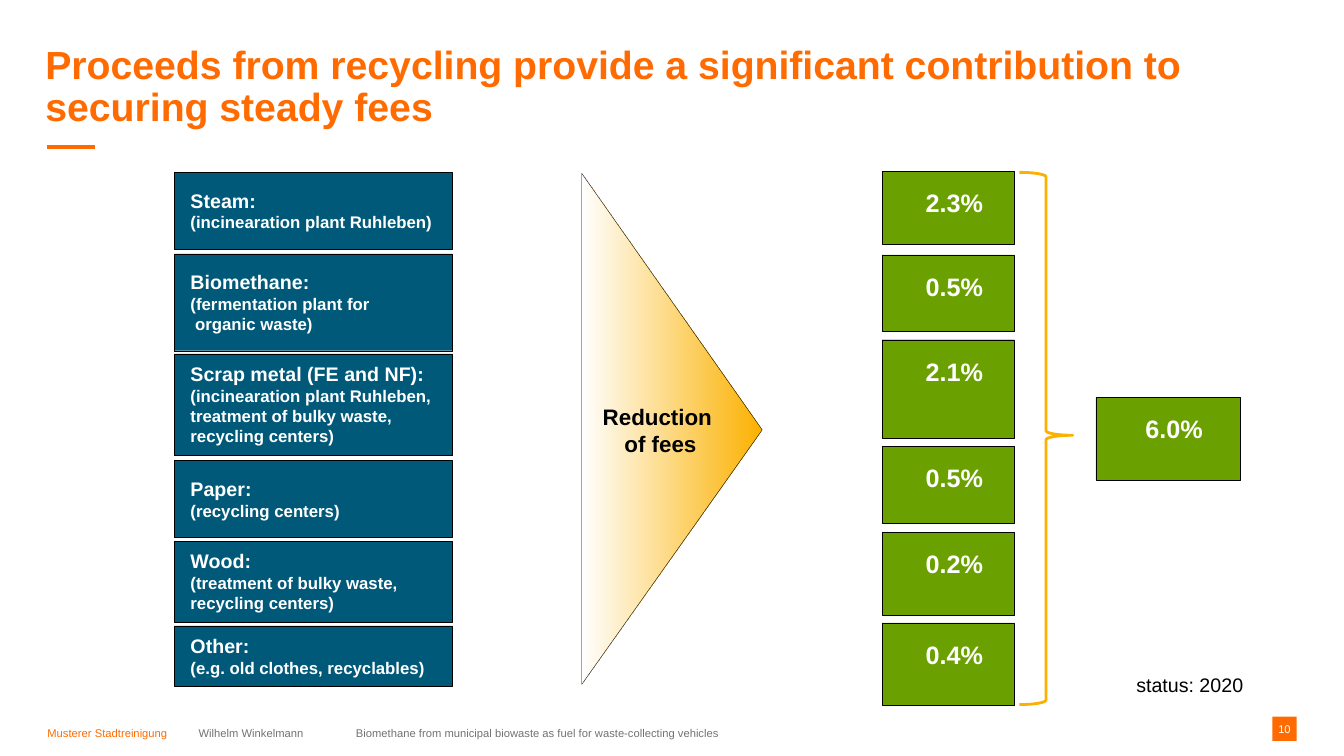
from dataclasses import dataclass

from lxml.etree import SubElement
from pptx import Presentation
from pptx.dml.color import RGBColor
from pptx.enum.shapes import MSO_CONNECTOR as Connector, MSO_SHAPE as Shape
from pptx.enum.text import MSO_ANCHOR as Anchor, MSO_AUTO_SIZE as AutoSize, PP_ALIGN as Align
from pptx.oxml.ns import qn
from pptx.util import Pt

TITLE = "Proceeds from recycling provide a significant contribution to securing steady fees"
SOURCES = [
    ("Steam:", "(incinearation plant Ruhleben)", 171, 76, 16),
    ("Biomethane:", "(fermentation plant for\v organic waste)", 252, 96, 16),
    ("Scrap metal (FE and NF):",
     "(incinearation plant Ruhleben, treatment of bulky waste, recycling centers)", 351, 101, 8),
    ("Paper:", "(recycling centers)", 457, 76, 16),
    ("Wood:", "(treatment of bulky waste, recycling centers)", 537, 80, 8),
    ("Other:", "(e.g. old clothes, recyclables)", 621, 60, 8),
]
SHARES = [
    ("2.3%", 875, 170, 131, 72),
    ("0.5%", 875, 253, 131, 76),
    ("2.1%", 875, 337, 131, 98),
    ("0.5%", 875, 443, 131, 76),
    ("0.2%", 875, 528, 131, 82),
    ("0.4%", 875, 618, 131, 82),
    ("6.0%", 1087, 394, 143, 82),
]
EFFECT = ["Reduction", " of fees"]
STATUS = "status: 2020"
FOOTER = [
    ("Musterer Stadtreinigung", 47, 140, "orange"),
    ("Wilhelm Winkelmann", 197, 140, "grey"),
    ("Biomethane from municipal biowaste as fuel for waste-collecting vehicles", 353, 600, "grey"),
]
PAGE_NUMBER = "10"


@dataclass(frozen=True)
class Theme:
    font: str = "Arial"
    orange: str = "FF6B00"
    amber: str = "FBB100"
    blue: str = "005979"
    green: str = "6AA000"
    grey: str = "767171"
    black: str = "000000"
    white: str = "FFFFFF"
    title: int = 28
    share: int = 18
    effect: int = 16
    heading: int = 14
    detail: int = 12
    small: int = 8
    hairline: float = 0.25


THEME = Theme()
EMU_PER_PX = 9144


def px(*lengths):
    return [round(length * EMU_PER_PX) for length in lengths]


def rgb(colour):
    return RGBColor.from_string(colour)


def write(shape, lines, sizes, colour, bold=False, align=Align.LEFT,
          anchor=Anchor.TOP, insets=(0, 0, 0, 0), wrap=True):
    frame = shape.text_frame
    frame.text = "\n".join(lines)
    frame.word_wrap = wrap
    frame.auto_size = AutoSize.NONE
    frame.vertical_anchor = anchor
    frame.margin_left, frame.margin_top, frame.margin_right, frame.margin_bottom = px(*insets)
    for para, size in zip(frame.paragraphs, sizes):
        para.alignment = align
        for span in para.runs:
            span.font.name = THEME.font
            span.font.size = Pt(size)
            span.font.bold = bold
            span.font.color.rgb = rgb(colour)


def add_box(page, kind, area, fill=None, line=None, width=THEME.hairline):
    box = page.shapes.add_shape(kind, *px(*area))
    box.shadow.inherit = False
    if fill:
        box.fill.solid()
        box.fill.fore_color.rgb = rgb(fill)
    else:
        box.fill.background()
    if line:
        box.line.color.rgb = rgb(line)
        box.line.width = Pt(width)
    else:
        box.line.fill.background()
    return box


def add_label(page, area, lines, size, colour, **style):
    label = page.shapes.add_textbox(*px(*area))
    write(label, lines, [size] * len(lines), colour, **style)


def add_title(page):
    title = page.shapes.title
    title.left, title.top, title.width, title.height = px(45, 45, 1241, 87)
    write(title, [TITLE], [THEME.title], THEME.orange, bold=True)
    title.text_frame.paragraphs[0].line_spacing = 0.9
    rule = page.shapes.add_connector(Connector.STRAIGHT, *px(47, 146, 94, 146))
    rule.line.color.rgb = rgb(THEME.orange)
    rule.line.width = Pt(2.5)
    SubElement(rule.element.spPr, qn("a:effectLst"))


def add_sources(page):
    for heading, detail, top, height, inset in SOURCES:
        box = add_box(page, Shape.RECTANGLE, (173, top, 276, height), THEME.blue, THEME.black)
        write(box, [heading, detail], [THEME.heading, THEME.detail], THEME.white,
              bold=True, insets=(16, inset, 16, inset))


def add_shares(page):
    for share, *area in SHARES:
        box = add_box(page, Shape.RECTANGLE, area, THEME.green, THEME.black)
        write(box, [share], [THEME.share], THEME.white, bold=True,
              align=Align.CENTER, insets=(16, 16, 4, 16))
    brace = add_box(page, Shape.RIGHT_BRACE, (1011, 171, 53, 528), line=THEME.amber, width=2)
    brace.adjustments[0], brace.adjustments[1] = 0.083, 0.494


def add_effect(page):
    arrow = add_box(page, Shape.ISOSCELES_TRIANGLE, (413, 336, 507, 179), line=THEME.black)
    arrow.adjustments[0] = 0.502
    arrow.rotation = 90
    arrow.fill.gradient()
    arrow.fill.gradient_angle = 270
    for stop, colour in zip(arrow.fill.gradient_stops, (THEME.amber, THEME.white)):
        stop.color.rgb = rgb(colour)
    add_label(page, (597, 400, 110, 54), EFFECT, THEME.effect, THEME.black,
              bold=True, align=Align.CENTER, wrap=False)


def add_footer(page):
    add_label(page, (1127, 668, 117, 31), [STATUS], THEME.heading, THEME.black)
    for text, left, width, colour in FOOTER:
        add_label(page, (left, 703, width, 31), [text], THEME.small,
                  getattr(THEME, colour), anchor=Anchor.BOTTOM)
    badge = add_box(page, Shape.RECTANGLE, (1262, 711, 24, 24), THEME.orange)
    write(badge, [PAGE_NUMBER], [THEME.small], THEME.white,
          align=Align.CENTER, anchor=Anchor.MIDDLE)


def main():
    deck = Presentation()
    deck.slide_width, deck.slide_height = px(1333, 750)
    page = deck.slides.add_slide(deck.slide_layouts[5])
    for add_part in (add_title, add_sources, add_shares, add_effect, add_footer):
        add_part(page)
    deck.save("out.pptx")


if __name__ == "__main__":
    main()
